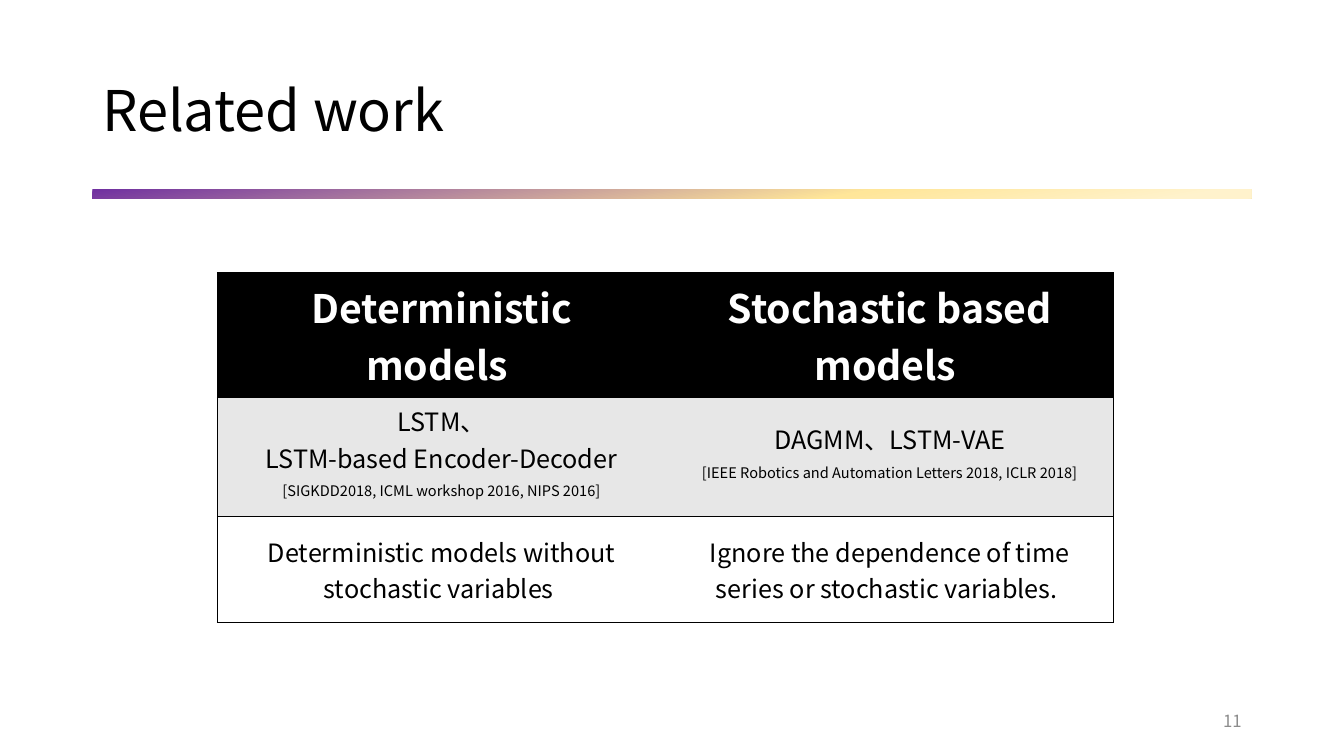
from lxml.etree import SubElement
from pptx import Presentation
from pptx.dml.color import RGBColor
from pptx.enum.shapes import MSO_SHAPE
from pptx.enum.text import MSO_ANCHOR, PP_ALIGN
from pptx.oxml import parse_xml
from pptx.oxml.ns import qn
from pptx.util import Inches, Pt

FONT = "Noto Sans CJK SC"
NS = 'xmlns:a="http://schemas.openxmlformats.org/drawingml/2006/main"'
BLACK, WHITE, GREY = "000000", "FFFFFF", "E7E7E7"
LEFT, WIDE = 11, 138  # margin and content width in grid columns

# Each row: height in grid rows, size, bold, text colour, fill, cells;
# each cell: anchor, paragraphs. A text in square brackets is a raised citation.
TOP, MID = MSO_ANCHOR.TOP, MSO_ANCHOR.MIDDLE
ROWS = [
    (14.8, 28, True, WHITE, BLACK, [
        (TOP, [["Deterministic"], ["models "]]),
        (TOP, [["Stochastic based models "]]),
    ]),
    (14.2, 18, False, BLACK, GREY, [
        (TOP, [["LSTM、"],
               ["LSTM-based Encoder-Decoder ",
                "[SIGKDD2018, ICML workshop 2016, NIPS 2016]"]]),
        (MID, [["DAGMM、LSTM-VAE"],
               ["[IEEE Robotics and Automation Letters 2018, ICLR 2018]"]]),
    ]),
    (12.6, 18, False, BLACK, WHITE, [
        (MID, [["Deterministic models without stochastic variables "]]),
        (MID, [["Ignore the dependence of time series or stochastic variables. "]]),
    ]),
]


def grid(*cells):
    """Turn grid steps, twelve to the inch, into lengths."""
    return [Inches(cell / 12) for cell in cells]


def color(code):
    return RGBColor.from_string(code)


def add_run(para, text, size, tint, bold=False):
    run = para.add_run()
    run.text = text
    font = run.font
    font.name, font.size, font.bold = FONT, Pt(size), bold
    font.color.rgb = color(tint)
    props = font._element
    SubElement(props, qn("a:ea")).set("typeface", FONT)
    if text.startswith("["):
        props.set("baseline", "30000")


def add_label(slide, box, text, size, tint, align, space=1.0):
    frame = slide.shapes.add_textbox(*grid(*box)).text_frame
    frame.word_wrap = True
    frame.vertical_anchor = MID
    para = frame.paragraphs[0]
    para.alignment = align
    para.line_spacing = space
    add_run(para, text, size, tint)


def add_bar(slide, box, stops, angle):
    bar = slide.shapes.add_shape(MSO_SHAPE.RECTANGLE, *grid(*box))
    bar.shadow.inherit = False
    bar.line.fill.background()
    marks = "".join(
        f'<a:gs pos="{pos * 1000}"><a:srgbClr val="{code}"/></a:gs>'
        for pos, code in stops)
    fill = parse_xml(
        f'<a:gradFill {NS} rotWithShape="1"><a:gsLst>{marks}</a:gsLst>'
        f'<a:lin ang="{angle * 60000}" scaled="0"/></a:gradFill>')
    bar._element.spPr.find(qn("a:prstGeom")).addnext(fill)


def set_edges(cell, shown):
    """Draw the named sides in black and clear the others."""
    props = cell._tc.get_or_add_tcPr()
    for spot, side in enumerate("LRTB"):
        paint = (f'<a:solidFill><a:srgbClr val="{BLACK}"/></a:solidFill>'
                 if side in shown else "<a:noFill/>")
        edge = parse_xml(f'<a:ln{side} {NS} w="{Pt(1)}">{paint}</a:ln{side}>')
        props.insert(spot, edge)


def fill_cell(cell, anchor, paras, size, bold, tint, back):
    cell.vertical_anchor = anchor
    cell.fill.solid()
    cell.fill.fore_color.rgb = color(back)
    frame = cell.text_frame
    for spot, texts in enumerate(paras):
        para = frame.add_paragraph() if spot else frame.paragraphs[0]
        para.alignment = PP_ALIGN.CENTER
        for text in texts:
            add_run(para, text, size, tint, bold)


def add_grid(slide, left, top, width, rows):
    count = len(rows[0][-1])
    box = grid(left, top, width, sum(row[0] for row in rows))
    table = slide.shapes.add_table(len(rows), count, *box).table
    for r, (height, size, bold, tint, back, cells) in enumerate(rows):
        table.rows[r].height = grid(height)[0]
        for c, (anchor, paras) in enumerate(cells):
            cell = table.cell(r, c)
            fill_cell(cell, anchor, paras, size, bold, tint, back)
            outer = ("L" if c == 0 else "") + ("R" if c == count - 1 else "")
            set_edges(cell, "TB" + outer)


def main():
    deck = Presentation()
    deck.slide_width, deck.slide_height = grid(160, 90)
    slide = deck.slides.add_slide(deck.slide_layouts[6])
    add_label(slide, (LEFT, 4.8, WIDE, 17.4), "Related work", 40, BLACK,
              PP_ALIGN.LEFT, 0.9)
    add_bar(slide, (LEFT, 22.5, WIDE, 1.1),
            [(0, "7030A0"), (65, "FFE699"), (94, "FFF2CC"), (100, "FFF2CC")], 80)
    add_label(slide, (LEFT + WIDE - 36, 83.4, 36, 4.8), "11", 12, "8C8C8C",
              PP_ALIGN.RIGHT)
    add_grid(slide, 25.9, 32.5, 106.7, ROWS)
    deck.save("out.pptx")


if __name__ == "__main__":
    main()
